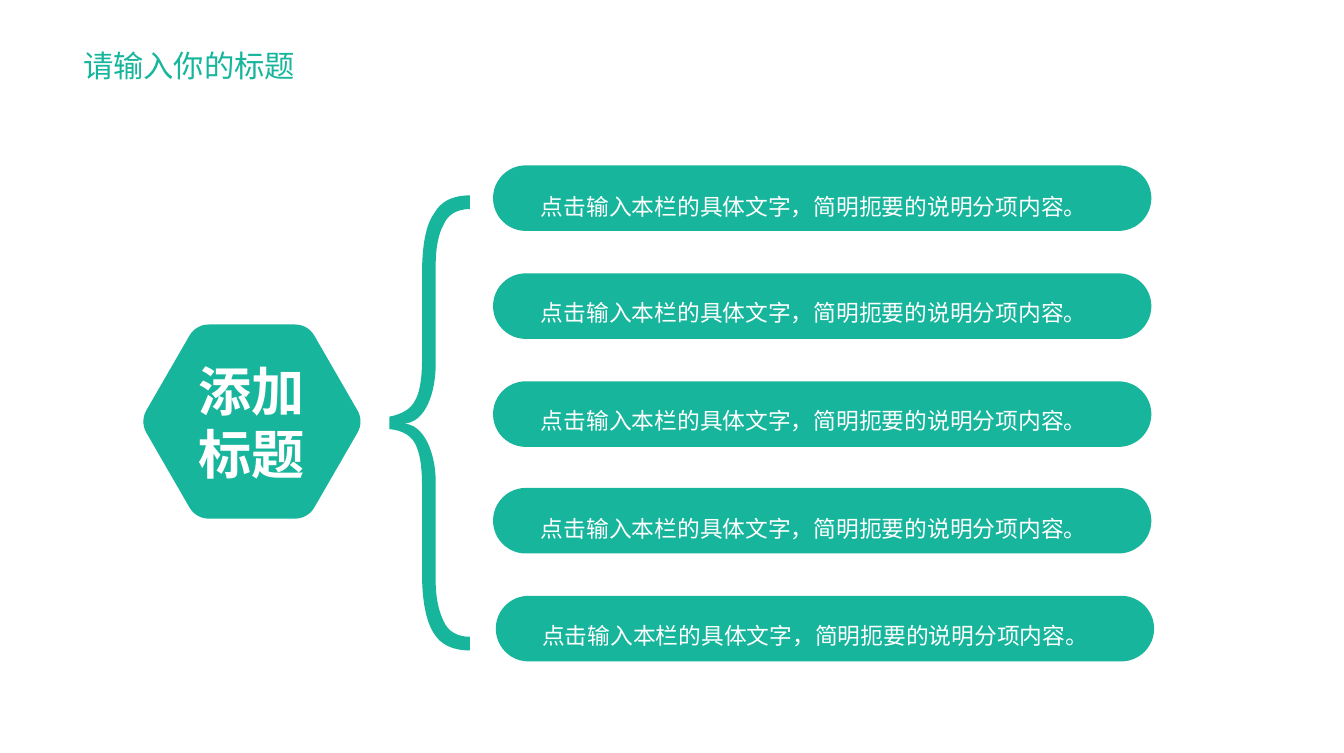
"""Build a slide with a hexagon heading, a brace and five text bars."""
from dataclasses import dataclass
from math import cos, pi, sin

from lxml import etree
from pptx import Presentation
from pptx.dml.color import RGBColor
from pptx.enum.shapes import MSO_SHAPE
from pptx.enum.text import MSO_ANCHOR, MSO_AUTO_SIZE, PP_ALIGN
from pptx.oxml.ns import qn
from pptx.util import Pt

PX = 9144
ROUNDED = MSO_SHAPE.ROUNDED_RECTANGLE
LEFT, CENTER, JUSTIFY = PP_ALIGN.LEFT, PP_ALIGN.CENTER, PP_ALIGN.JUSTIFY
TOP = MSO_ANCHOR.TOP
GROW = MSO_AUTO_SIZE.SHAPE_TO_FIT_TEXT

BRACE = [
    [(319, 352)],
    [(319, 425)],
    [(319, 437), (321, 447), (325, 455)],
    [(328, 462), (335, 466), (344, 466)],
    [(344, 476)],
    [(332, 476), (323, 472), (318, 464)],
    [(312, 455), (309, 440), (309, 419)],
    [(309, 355)],
    [(309, 344), (308, 334), (305, 327)],
    [(302, 319), (295, 315), (285, 314)],
    [(285, 305)],
    [(295, 303), (301, 299), (304, 293)],
    [(307, 288), (309, 278), (309, 264)],
    [(309, 201)],
    [(309, 179), (312, 164), (318, 156)],
    [(323, 147), (332, 143), (344, 143)],
    [(344, 153)],
    [(335, 153), (328, 157), (325, 164)],
    [(321, 171), (319, 181), (319, 195)],
    [(319, 267)],
    [(319, 286), (312, 310), (295, 310)],
    [(295, 310)],
    [(311, 310), (319, 333), (319, 352)],
]


@dataclass(frozen=True)
class Theme:
    """Colours, font and type sizes."""
    font: str = "Noto Sans CJK SC"
    accent: RGBColor = RGBColor(0x16, 0xB5, 0x9C)
    light: RGBColor = RGBColor(0xFF, 0xFF, 0xFF)
    title: int = 16
    heading: int = 28
    body: int = 12


def toward(start, end, share=0.5):
    """Return the point a given share of the way from start to end."""
    return tuple(a + (b - a) * share for a, b in zip(start, end))


def rounded_hexagon(center, radius, trim):
    """Return the segments of a regular hexagon, two curves to a corner."""
    corners = [(center[0] + radius * cos(k * pi / 3),
                center[1] + radius * sin(k * pi / 3)) for k in range(1, 7)]
    segments = []
    for k, corner in enumerate(corners):
        entry = toward(corner, corners[k - 1], trim / radius)
        leave = toward(corner, corners[(k + 1) % 6], trim / radius)
        first, last = toward(entry, corner, 0.62), toward(leave, corner, 0.62)
        middle = toward(first, last)
        before = toward(toward(entry, first), middle)
        after = toward(middle, toward(last, leave))
        segments.append([entry])
        segments.append([toward(entry, first), before, toward(before, after)])
        segments.append([after, toward(last, leave), leave])
    return segments + segments[:1]


class SlideBuilder:
    """Hold the theme and the current slide, and draw each kind of element."""

    def __init__(self, page, theme):
        self.page = page
        self.theme = theme

    def paint(self, shape):
        shape.shadow.inherit = False
        shape.fill.solid()
        shape.fill.fore_color.rgb = self.theme.accent
        shape.line.fill.background()

    def bar(self, left, top, width, height):
        shape = self.page.shapes.add_shape(
            ROUNDED, left * PX, top * PX, width * PX, height * PX)
        shape.adjustments[0] = 0.5
        self.paint(shape)

    def outline(self, segments):
        anchors = [(x * PX, y * PX) for x, y in (segment[-1] for segment in segments)]
        builder = self.page.shapes.build_freeform(*anchors[0])
        builder.add_line_segments(anchors[1:], close=True)
        shape = builder.convert_to_shape()
        lines = list(shape._element.iter(qn("a:lnTo")))
        for line, segment in zip(lines, segments[1:]):
            if len(segment) == 3:
                curve = etree.Element(qn("a:cubicBezTo"))
                for x, y in segment:
                    point = etree.SubElement(curve, qn("a:pt"))
                    point.set("x", str(round(x * PX) - shape.left))
                    point.set("y", str(round(y * PX) - shape.top))
                line.getparent().replace(line, curve)
        self.paint(shape)

    def text(self, words, left, top, width, height, size, color,
             align=LEFT, spacing=None, inset=(0, 0), bold=False):
        box = self.page.shapes.add_textbox(left * PX, top * PX, width * PX, height * PX)
        frame = box.text_frame
        frame.word_wrap = True
        frame.auto_size = GROW
        frame.vertical_anchor = TOP
        frame.margin_left = frame.margin_right = inset[0] * PX
        frame.margin_top = frame.margin_bottom = inset[1] * PX
        para = frame.paragraphs[0]
        para.alignment = align
        para.line_spacing = spacing
        span = para.add_run()
        span.text = words
        span.font.size = Pt(size)
        span.font.bold = bold
        span.font.color.rgb = color
        span.font.name = self.theme.font
        east_asian = etree.SubElement(span.font._element, qn("a:ea"))
        east_asian.set("typeface", self.theme.font)


def main():
    deck = Presentation()
    deck.slide_width, deck.slide_height = 984 * PX, 551 * PX
    theme = Theme()
    slide = SlideBuilder(deck.slides.add_slide(deck.slide_layouts[6]), theme)

    slide.text("请输入你的标题", 51, 16, 212, 50, theme.title, theme.accent,
               spacing=1.5, inset=(10, 5))
    slide.outline(rounded_hexagon((184.5, 308.5), 82, 9.4))
    slide.text("添加标题", 135, 262, 98, 94, theme.heading, theme.light,
               align=CENTER, bold=True)
    slide.outline(BRACE)

    rows = [(361, 396)] * 4 + [(363, 397)]
    for row, (bar_left, text_left) in enumerate(rows):
        slide.bar(bar_left, (486 + 315 * row) // 4, 482, 48)
        slide.text("点击输入本栏的具体文字，简明扼要的说明分项内容。",
                   text_left, (1371 + 787 * row) // 10, 405, 24,
                   theme.body, theme.light, align=JUSTIFY, spacing=1.2)

    deck.save("out.pptx")


if __name__ == "__main__":
    main()
